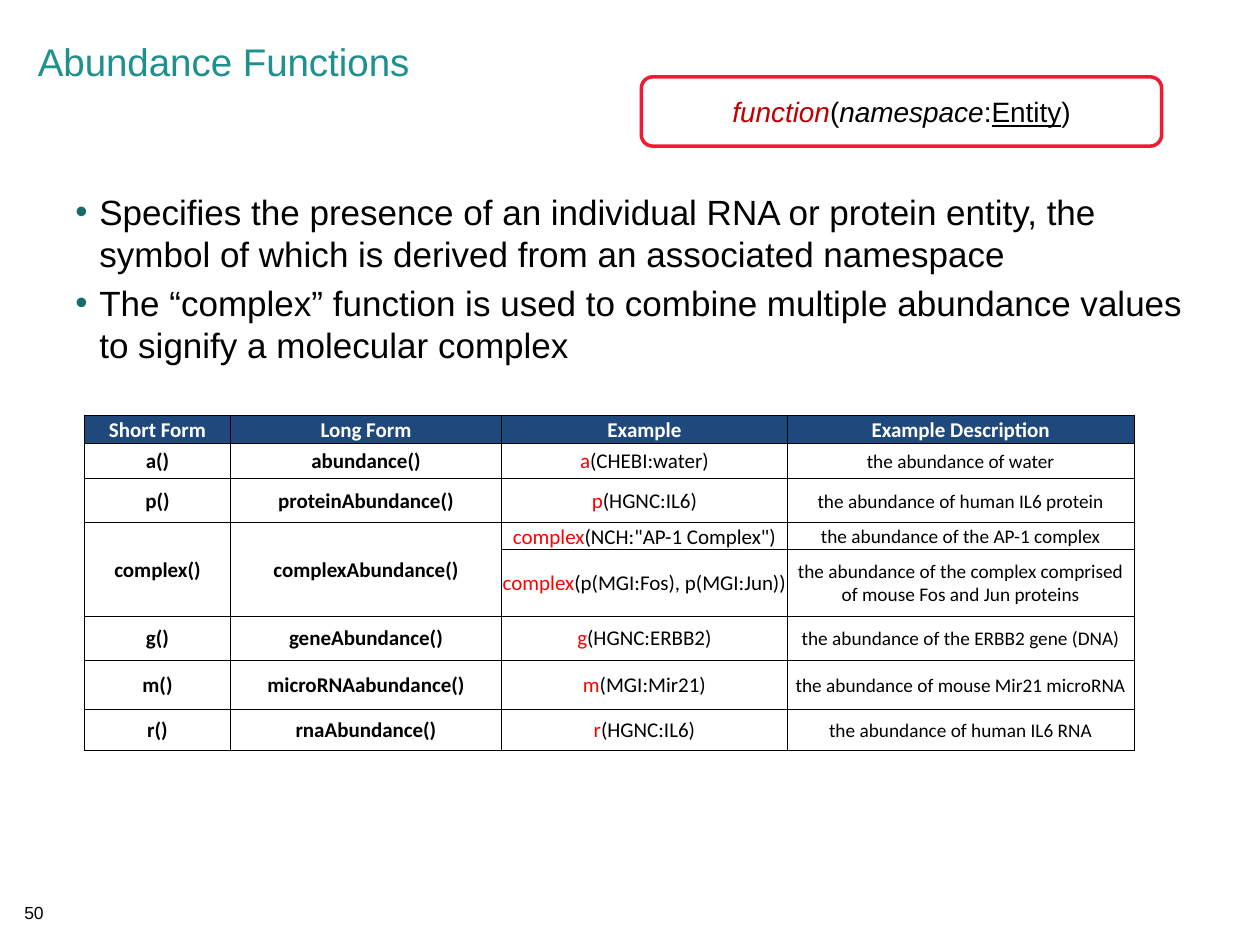
from lxml import etree
from pptx import Presentation
from pptx import util as u
from pptx.dml.color import RGBColor
from pptx.enum import shapes, text
from pptx.oxml.ns import qn

BLACK = RGBColor(0x00, 0x00, 0x00)
WHITE = RGBColor(0xFF, 0xFF, 0xFF)
TEAL = RGBColor(0x1E, 0x90, 0x8E)
BULLET_TEAL = RGBColor(0x17, 0x6C, 0x6A)
NAVY = RGBColor(0x1F, 0x49, 0x7D)
RED = RGBColor(0xFF, 0x00, 0x00)
DARK_RED = RGBColor(0xC0, 0x00, 0x00)
FRAME_RED = RGBColor(0xF0, 0x1A, 0x32)

TITLE = "Abundance Functions"
PAGE_NUMBER = "50"
BULLETS = [
    "Specifies the presence of an individual RNA or protein entity, the symbol "
    "of which is derived from an associated namespace",
    "The “complex” function is used to combine multiple abundance values to "
    "signify a molecular complex",
]
SYNTAX = [
    ("function", {"italic": True, "color": DARK_RED}),
    ("(", {}),
    ("namespace", {"italic": True}),
    (":", {}),
    ("Entity", {"underline": True}),
    (")", {}),
]
HEADERS = ["Short Form", "Long Form", "Example", "Example Description"]
FUNCTIONS = [
    ("a()", "abundance()", ("a", "(CHEBI:water)"), "the abundance of water"),
    ("p()", "proteinAbundance()", ("p", "(HGNC:IL6)"),
     "the abundance of human IL6 protein"),
    ("complex()", "complexAbundance()", ("complex", '(NCH:"AP-1 Complex")'),
     "the abundance of the AP-1 complex"),
    (None, None, ("complex", "(p(MGI:Fos), p(MGI:Jun))"),
     "the abundance of the complex comprised of mouse Fos and Jun proteins"),
    ("g()", "geneAbundance()", ("g", "(HGNC:ERBB2)"),
     "the abundance of the ERBB2 gene (DNA)"),
    ("m()", "microRNAabundance()", ("m", "(MGI:Mir21)"),
     "the abundance of mouse Mir21 microRNA"),
    ("r()", "rnaAbundance()", ("r", "(HGNC:IL6)"),
     "the abundance of human IL6 RNA"),
]
COLUMN_WIDTHS = [1.16, 2.15, 2.27, 2.75]
ROW_HEIGHTS = [0.22, 0.28, 0.35, 0.21, 0.53, 0.35, 0.39, 0.33]


def add_run(paragraph, content, size=12, font="Arial", color=BLACK,
            bold=False, italic=False, underline=False):
    run = paragraph.add_run()
    run.text = content
    run.font.size = u.Pt(size)
    run.font.name = font
    run.font.color.rgb = color
    run.font.bold = bold
    run.font.italic = italic
    run.font.underline = underline


def add_text_box(slide, *box):
    frame = slide.shapes.add_textbox(*map(u.Inches, box)).text_frame
    frame.word_wrap = True
    return frame


def add_bullet(paragraph, color):
    properties = paragraph._p.get_or_add_pPr()
    properties.set("marL", str(u.Inches(0.19)))
    properties.set("indent", str(-u.Inches(0.19)))
    bullet_color = etree.SubElement(properties, qn("a:buClr"))
    etree.SubElement(bullet_color, qn("a:srgbClr"), val=str(color))
    etree.SubElement(properties, qn("a:buFont"), typeface="Arial")
    etree.SubElement(properties, qn("a:buChar"), char="•")


def format_cell(cell, runs, fill=None, **style):
    cell.margin_left = cell.margin_right = cell.margin_top = u.Inches(0.01)
    cell.margin_bottom = 0
    cell.vertical_anchor = text.MSO_ANCHOR.MIDDLE
    paragraph = cell.text_frame.paragraphs[0]
    paragraph.alignment = text.PP_ALIGN.CENTER
    for content, color in runs:
        add_run(paragraph, content, font="Calibri", color=color, **style)
    properties = cell._tc.get_or_add_tcPr()
    for side in ("a:lnL", "a:lnR", "a:lnT", "a:lnB"):
        border = etree.SubElement(properties, qn(side), w=str(u.Pt(0.5)))
        solid = etree.SubElement(border, qn("a:solidFill"))
        etree.SubElement(solid, qn("a:srgbClr"), val=str(BLACK))
    if fill is None:
        cell.fill.background()
    else:
        cell.fill.solid()
        cell.fill.fore_color.rgb = fill


def add_title(slide):
    title = slide.shapes.title
    title.left, title.top = u.Inches(0.2), u.Inches(0.29)
    title.width, title.height = u.Inches(8.42), u.Inches(0.9)
    title.text_frame.vertical_anchor = text.MSO_ANCHOR.TOP
    paragraph = title.text_frame.paragraphs[0]
    paragraph.alignment = text.PP_ALIGN.LEFT
    paragraph.line_spacing = 0.9
    add_run(paragraph, TITLE, size=22, color=TEAL)


def add_bullets(slide):
    frame = add_text_box(slide, 0.5, 1.46, 9, 1.81)
    for index, content in enumerate(BULLETS):
        paragraph = frame.add_paragraph() if index else frame.paragraphs[0]
        if index:
            paragraph.space_before = u.Pt(4)
        add_bullet(paragraph, BULLET_TEAL)
        add_run(paragraph, content, size=20)


def add_function_table(slide):
    table = slide.shapes.add_table(
        len(ROW_HEIGHTS), len(COLUMN_WIDTHS), u.Inches(0.67), u.Inches(3.3),
        u.Inches(sum(COLUMN_WIDTHS)), u.Inches(sum(ROW_HEIGHTS))).table
    for column, width in zip(table.columns, COLUMN_WIDTHS):
        column.width = u.Inches(width)
    for row, height in zip(table.rows, ROW_HEIGHTS):
        row.height = u.Inches(height)
    for column, header in enumerate(HEADERS):
        format_cell(table.cell(0, column), [(header, WHITE)], NAVY, bold=True)
    for row, (short, long, example, description) in enumerate(FUNCTIONS, 1):
        for column, name in enumerate((short, long)):
            runs = [(name, BLACK)] if name else []
            format_cell(table.cell(row, column), runs, bold=True)
            if name is None:
                table.cell(row - 1, column).merge(table.cell(row, column))
        format_cell(table.cell(row, 2), zip(example, (RED, BLACK)))
        format_cell(table.cell(row, 3), [(description, BLACK)], size=11)


def add_syntax_box(slide):
    shape = slide.shapes.add_shape(
        shapes.MSO_SHAPE.ROUNDED_RECTANGLE,
        *map(u.Inches, (5.09, 0.61, 4.13, 0.55)))
    shape.shadow.inherit = False
    shape.fill.solid()
    shape.fill.fore_color.rgb = WHITE
    shape.line.color.rgb = FRAME_RED
    shape.line.width = u.Pt(2)
    shape.text_frame.vertical_anchor = text.MSO_ANCHOR.MIDDLE
    paragraph = shape.text_frame.paragraphs[0]
    paragraph.alignment = text.PP_ALIGN.CENTER
    for content, style in SYNTAX:
        add_run(paragraph, content, size=16, **style)


def add_page_number(slide):
    paragraph = add_text_box(slide, 0.06, 7.11, 0.42, 0.27).paragraphs[0]
    paragraph.alignment = text.PP_ALIGN.CENTER
    add_run(paragraph, PAGE_NUMBER, size=10)


def main():
    presentation = Presentation()
    presentation.slide_width = u.Inches(10)
    presentation.slide_height = u.Inches(7.5)
    slide = presentation.slides.add_slide(presentation.slide_layouts[5])
    add_title(slide)
    add_page_number(slide)
    add_bullets(slide)
    add_function_table(slide)
    add_syntax_box(slide)
    presentation.save("out.pptx")


if __name__ == "__main__":
    main()
